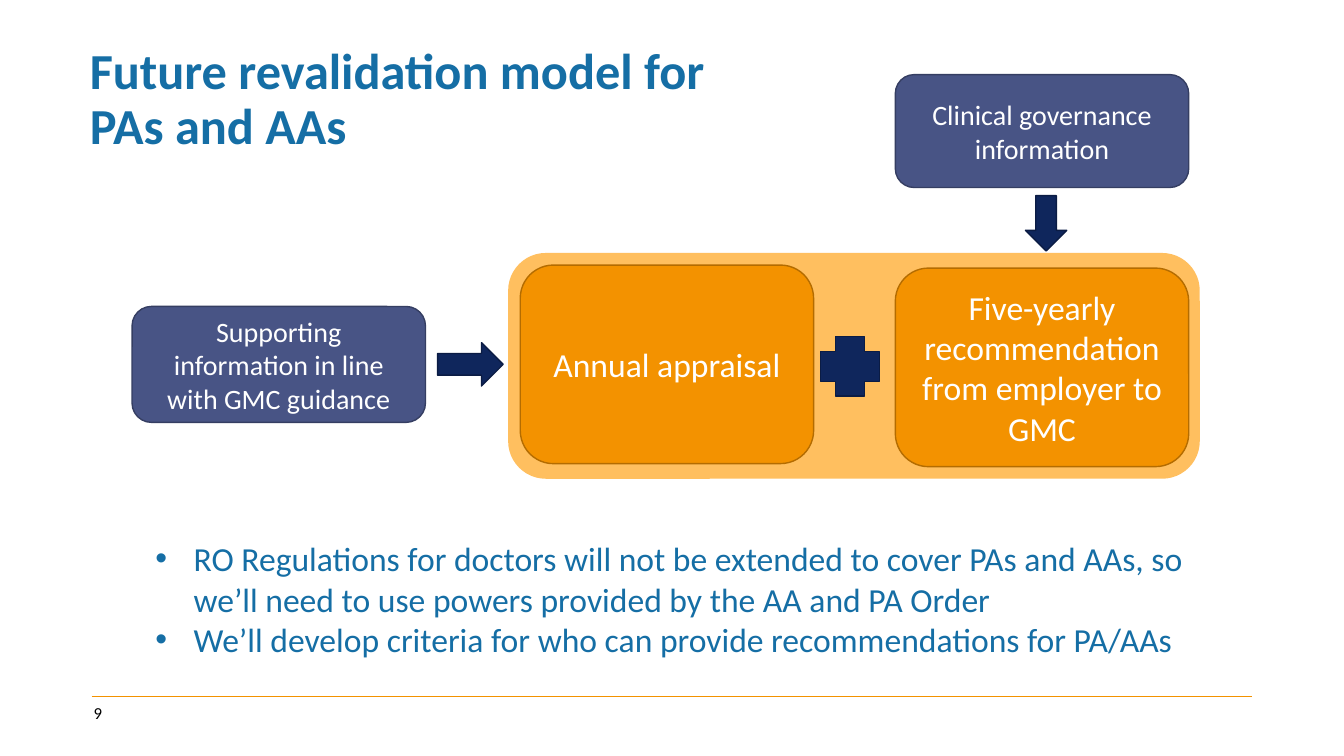
from lxml.etree import SubElement
from pptx import Presentation
from pptx.dml.color import RGBColor
from pptx.enum.shapes import MSO_CONNECTOR, MSO_SHAPE
from pptx.enum.text import MSO_ANCHOR, MSO_AUTO_SIZE, PP_ALIGN
from pptx.oxml.ns import qn
from pptx.util import Emu, Pt

PX = 9144  # 100 px to the inch
FONT = "Calibri"
BLUE, WHITE, BLACK = "156EA5", "FFFFFF", "000000"
NAVY = ("0F265C", "0B1C44")
INDIGO = ("485485", "353E62")
ORANGE = ("F39200", "B46C00")
PALE_ORANGE = ("FFBF5F", None)

TITLE = "Future revalidation model for PAs and AAs"
BULLETS = [
    "RO Regulations for doctors will not be extended to cover PAs and AAs, "
    "so we’ll need to use powers provided by the AA and PA Order",
    "We’ll develop criteria for who can provide recommendations for PA/AAs",
]
PAGE_NUMBER = "9"
BULLET_INDENT = 38

BOX_WIDTH = 291
APPRAISAL_LEFT, RECOMMENDATION_LEFT = 516, 888
STAGE_HEIGHT = 197

# left, top, width, height, (fill, line)
PANEL = (504, 251, 686, 224, PALE_ORANGE)
# text, left, top, height, (fill, line), text size
BOXES = [
    ("Annual appraisal", APPRAISAL_LEFT, 263, STAGE_HEIGHT, ORANGE, 24),
    ("Five-yearly recommendation from employer to GMC",
     RECOMMENDATION_LEFT, 266, STAGE_HEIGHT, ORANGE, 24),
    ("Supporting information in line with GMC guidance",
     131, 304, 115, INDIGO, 20),
    ("Clinical governance information",
     RECOMMENDATION_LEFT, 74, 112, INDIGO, 20),
]
# preset, left, top, width, height
SYMBOLS = [
    (MSO_SHAPE.RIGHT_ARROW, 434, 340, 65, 43),
    (MSO_SHAPE.CROSS, 814, 334, 58, 59),
    (MSO_SHAPE.DOWN_ARROW, 1017, 194, 41, 55),
]


def px(*lengths):
    return [Emu(length * PX) for length in lengths]


def color(hex_string):
    return RGBColor.from_string(hex_string)


def place(shape, *box):
    shape.left, shape.top, shape.width, shape.height = px(*box)


def write(shape, *texts, size, ink, bold=False, align=PP_ALIGN.LEFT,
          anchor=MSO_ANCHOR.MIDDLE, line_spacing=1.0, bullet=None):
    """Fill a shape with one paragraph per text."""
    frame = shape.text_frame
    frame.auto_size = MSO_AUTO_SIZE.NONE
    frame.word_wrap = True
    frame.vertical_anchor = anchor
    frame.text = "\n".join(texts)
    for paragraph in frame.paragraphs:
        if bullet:
            add_bullet(paragraph, bullet)
        paragraph.alignment = align
        paragraph.line_spacing = line_spacing
        paragraph.space_before = Pt(0)
        font = paragraph.runs[0].font
        font.name, font.size, font.bold = FONT, Pt(size), bold
        font.color.rgb = color(ink)


def add_bullet(paragraph, character):
    properties = paragraph._p.get_or_add_pPr()
    indent = BULLET_INDENT * PX
    properties.set("marL", str(indent))
    properties.set("indent", str(-indent))
    SubElement(properties, qn("a:buFont")).set("typeface", "Arial")
    SubElement(properties, qn("a:buChar")).set("char", character)


def add_preset(slide, preset, left, top, width, height, colors):
    fill, line = colors
    shape = slide.shapes.add_shape(preset, *px(left, top, width, height))
    shape.shadow.inherit = False
    shape.fill.solid()
    shape.fill.fore_color.rgb = color(fill)
    if line:
        shape.line.color.rgb = color(line)
        shape.line.width = Pt(1)
    else:
        shape.line.fill.background()
    return shape


def add_footer(slide):
    rule = slide.shapes.add_connector(
        MSO_CONNECTOR.STRAIGHT, *px(91, 691, 1242, 691))
    rule.line.color.rgb = color(ORANGE[0])
    rule.line.width = Pt(0.5)
    SubElement(rule._element.spPr, qn("a:effectLst"))
    number = slide.shapes.add_textbox(*px(83, 695, 49, 25))
    write(number, PAGE_NUMBER, size=12, ink=BLACK)


def main():
    presentation = Presentation()
    presentation.slide_width, presentation.slide_height = px(1333, 750)
    slide = presentation.slides.add_slide(presentation.slide_layouts[1])

    title, body = slide.placeholders
    place(title, 79, 41, 686, 145)
    write(title, TITLE, size=36, ink=BLUE, bold=True,
          anchor=MSO_ANCHOR.TOP, line_spacing=0.9)
    place(body, 144, 524, 1054, 135)
    write(body, *BULLETS, size=24, ink=BLUE,
          anchor=MSO_ANCHOR.BOTTOM, bullet="•")

    add_footer(slide)
    add_preset(slide, MSO_SHAPE.ROUNDED_RECTANGLE, *PANEL)
    for text, left, top, height, colors, size in BOXES:
        box = add_preset(slide, MSO_SHAPE.ROUNDED_RECTANGLE,
                         left, top, BOX_WIDTH, height, colors)
        write(box, text, size=size, ink=WHITE, align=PP_ALIGN.CENTER)
    for symbol in SYMBOLS:
        add_preset(slide, *symbol, NAVY)

    presentation.save("out.pptx")


if __name__ == "__main__":
    main()
